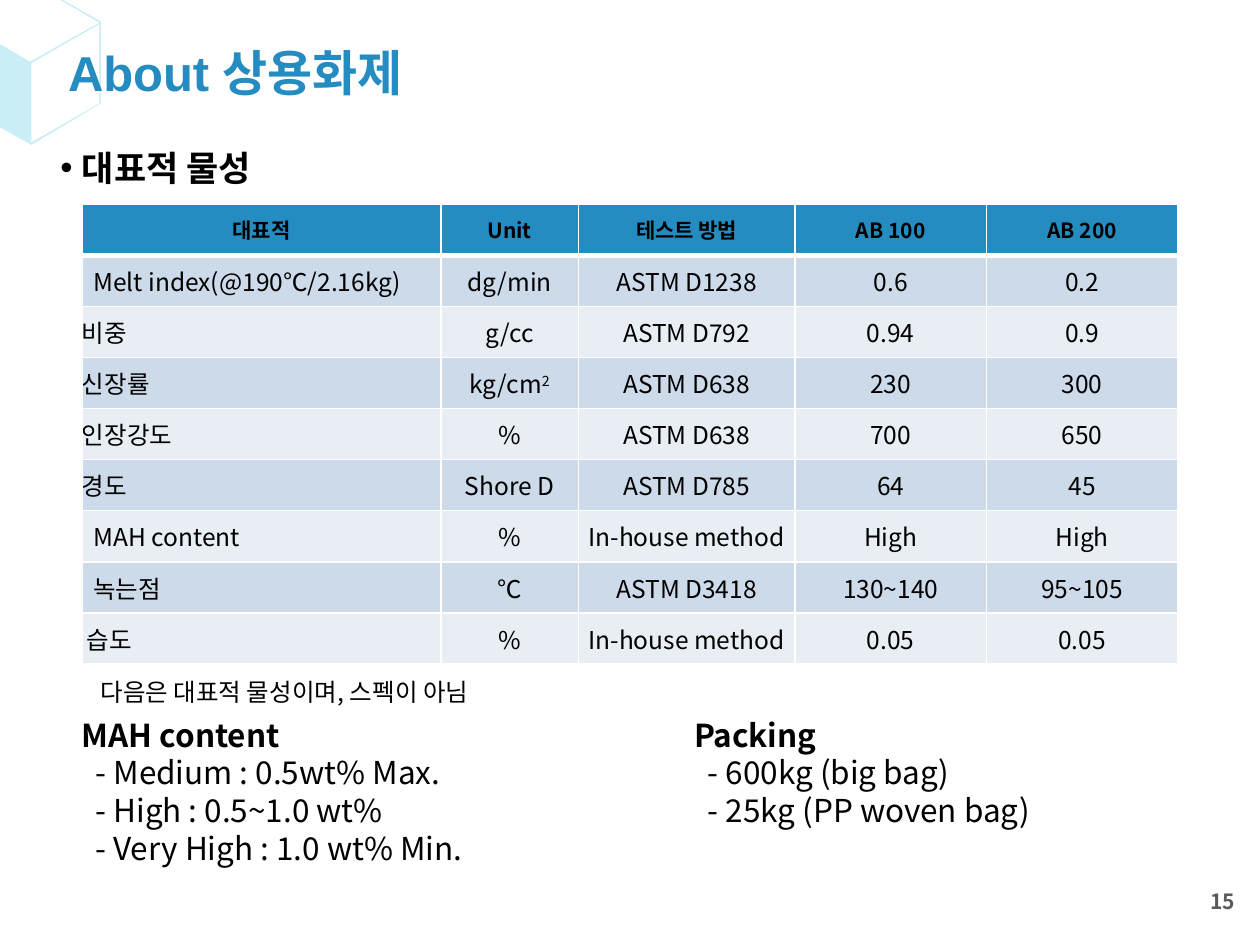
from dataclasses import dataclass

from lxml.etree import SubElement
from pptx import Presentation
from pptx.dml.color import RGBColor
from pptx.enum.text import MSO_ANCHOR, MSO_AUTO_SIZE, PP_ALIGN
from pptx.oxml.ns import qn
from pptx.util import Inches, Pt

FONT = "Noto Sans CJK KR"
COLORS = {"accent": "248CC1", "cube": "C9EEF5", "dark": "CDDAE9", "light": "E8EEF4",
          "text": "000000", "number": "595959", "border": "FFFFFF"}


@dataclass
class Note:
    left: float
    top: float
    width: float
    height: float
    heading: str
    items: list[str]


@dataclass
class Property:
    name: str
    indent: float
    values: list[str]


HEADER = ["대표적", "Unit", "테스트 방법", "AB 100", "AB 200"]
COL_WIDTHS = [2.85, 1.09, 1.72, 1.52, 1.52]
ROW_HEIGHT = 3.65 / 9
PROPERTIES = [
    Property("Melt index(@190℃/2.16kg)", 0.09, ["dg/min", "ASTM D1238", "0.6", "0.2"]),
    Property("비중", 0, ["g/cc", "ASTM D792", "0.94", "0.9"]),
    Property("신장률", 0, ["kg/cm^2", "ASTM D638", "230", "300"]),
    Property("인장강도", 0, ["%", "ASTM D638", "700", "650"]),
    Property("경도", 0, ["Shore D", "ASTM D785", "64", "45"]),
    Property("MAH content", 0.09, ["%", "In-house method", "High", "High"]),
    Property("녹는점", 0.09, ["℃", "ASTM D3418", "130~140", "95~105"]),
    Property("습도", 0.04, ["%", "In-house method", "0.05", "0.05"]),
]
NOTES = [
    Note(0.55, 5.63, 4.6, 1.31, "MAH content",
         ["- Medium : 0.5wt% Max.", "- High : 0.5~1.0 wt%", "- Very High : 1.0 wt% Min."]),
    Note(5.41, 5.63, 3.49, 1.01, "Packing", ["- 600kg (big bag)", "- 25kg (PP woven bag)"]),
]
# Cube outline, then the opening of its right face
CUBE_OUTLINE = [(0.25, 1.15), (0.8, 0.82), (0.8, 0.17), (0.5, 0), (0.48, 0),
                (0.79, 0.18), (0.24, 0.49), (0, 0.35), (0, 1.01)]
CUBE_FACE = [(0.25, 0.5), (0.79, 0.19), (0.79, 0.82), (0.25, 1.13)]


def rgb(name: str) -> RGBColor:
    return RGBColor.from_string(COLORS[name])


def style(p, size: float, bold: bool = False, color: str = "text", font: str = FONT) -> None:
    for r in p.runs:
        f = r.font
        f.name, f.size, f.bold = font, Pt(size), bold
        f.color.rgb = rgb(color)
        SubElement(f._element, qn("a:ea"), typeface=FONT)


def place(sp, left: float, top: float, width: float, height: float) -> None:
    sp.left, sp.top = Inches(left), Inches(top)
    sp.width, sp.height = Inches(width), Inches(height)
    tf = sp.text_frame
    tf.word_wrap, tf.auto_size = True, MSO_AUTO_SIZE.NONE
    tf.vertical_anchor = MSO_ANCHOR.MIDDLE


def add_text(s, left: float, top: float, width: float, height: float, text: str):
    sp = s.shapes.add_textbox(0, 0, 0, 0)
    place(sp, left, top, width, height)
    sp.text_frame.text = text
    return sp.text_frame


def indent(p, left: float, first: float = 0) -> None:
    pPr = p._p.get_or_add_pPr()
    pPr.set("marL", str(Inches(left)))
    pPr.set("indent", str(Inches(first)))


def add_cube(s) -> None:
    fb = s.shapes.build_freeform(Inches(0.25), Inches(1.15))
    fb.add_line_segments([(Inches(x), Inches(y)) for x, y in CUBE_OUTLINE[1:]])
    fb.move_to(*(Inches(v) for v in CUBE_FACE[0]))
    fb.add_line_segments([(Inches(x), Inches(y)) for x, y in CUBE_FACE[1:]])
    sp = fb.convert_to_shape()
    sp.shadow.inherit = False
    sp.fill.solid()
    sp.fill.fore_color.rgb = rgb("cube")
    sp.line.fill.background()
    sp._element.getparent().insert(2, sp._element)  # behind the title


def fill_cell(cell, text: str, fill: str, size: float, header: bool, left: float | None) -> None:
    cell.margin_left = Inches(left or 0)
    cell.margin_right = cell.margin_top = cell.margin_bottom = 0
    cell.vertical_anchor = MSO_ANCHOR.MIDDLE
    base, _, power = text.partition("^")
    p = cell.text_frame.paragraphs[0]
    p.text = base
    p.alignment = PP_ALIGN.CENTER if left is None else PP_ALIGN.LEFT
    if power:
        r = p.add_run()
        r.text = power
        r.font._element.set("baseline", "30000")
    style(p, size, header)
    # Borders come before the fill in the cell properties
    for side in "LRTB":
        width = 3 if header and side == "B" else 1
        ln = SubElement(cell._tc.get_or_add_tcPr(), qn(f"a:ln{side}"), w=str(Pt(width)))
        SubElement(SubElement(ln, qn("a:solidFill")), qn("a:srgbClr"), val=COLORS["border"])
    cell.fill.solid()
    cell.fill.fore_color.rgb = rgb(fill)


def add_properties(s) -> None:
    rows = len(PROPERTIES) + 1
    tbl = s.shapes.add_table(rows, len(HEADER), Inches(0.65), Inches(1.62),
                             Inches(sum(COL_WIDTHS)), Inches(ROW_HEIGHT * rows)).table
    for col, width in zip(tbl.columns, COL_WIDTHS):
        col.width = Inches(width)
    for c, text in enumerate(HEADER):
        fill_cell(tbl.cell(0, c), text, "accent", 12, True, None)
    for i, prop in enumerate(PROPERTIES, 1):
        fill = "dark" if i % 2 else "light"
        for c, text in enumerate([prop.name, *prop.values]):
            fill_cell(tbl.cell(i, c), text, fill, 14, False, None if c else prop.indent)


def add_note(s, note: Note) -> None:
    tf = add_text(s, note.left, note.top, note.width, note.height, note.heading)
    tf.vertical_anchor = MSO_ANCHOR.TOP
    style(tf.paragraphs[0], 18, True)
    for item in note.items:
        p = tf.add_paragraph()
        p.text = item
        indent(p, 0.11)
        style(p, 18)


def main() -> None:
    prs = Presentation()
    prs.slide_width, prs.slide_height = Inches(10), Inches(7.5)
    s = prs.slides.add_slide(prs.slide_layouts[1])
    add_cube(s)

    # Title
    title = s.shapes.title
    place(title, 0.44, 0.23, 8.78, 0.74)
    title.text_frame.text = "About 상용화제"
    p = title.text_frame.paragraphs[0]
    p.alignment, p.line_spacing = PP_ALIGN.LEFT, 0.9
    style(p, 28, True, "accent", "Arial")

    # Section bullet
    body = s.placeholders[1]
    place(body, 0.38, 1.11, 2.4, 0.44)
    body.text_frame.text = "대표적 물성"
    p = body.text_frame.paragraphs[0]
    p.space_before = Pt(0)
    indent(p, 0.17, -0.17)
    SubElement(p._p.get_or_add_pPr(), qn("a:buChar"), char="•")
    style(p, 20, True)

    # Table with its remark
    add_properties(s)
    tf = add_text(s, 0.7, 5.32, 8.2, 0.34, "다음은 대표적 물성이며, 스펙이 아님")
    style(tf.paragraphs[0], 14)

    # Notes and page number
    for note in NOTES:
        add_note(s, note)
    tf = add_text(s, 7.91, 6.95, 1.99, 0.4, "15")
    tf.paragraphs[0].alignment = PP_ALIGN.RIGHT
    style(tf.paragraphs[0], 12, True, "number")

    prs.save("out.pptx")


if __name__ == "__main__":
    main()
